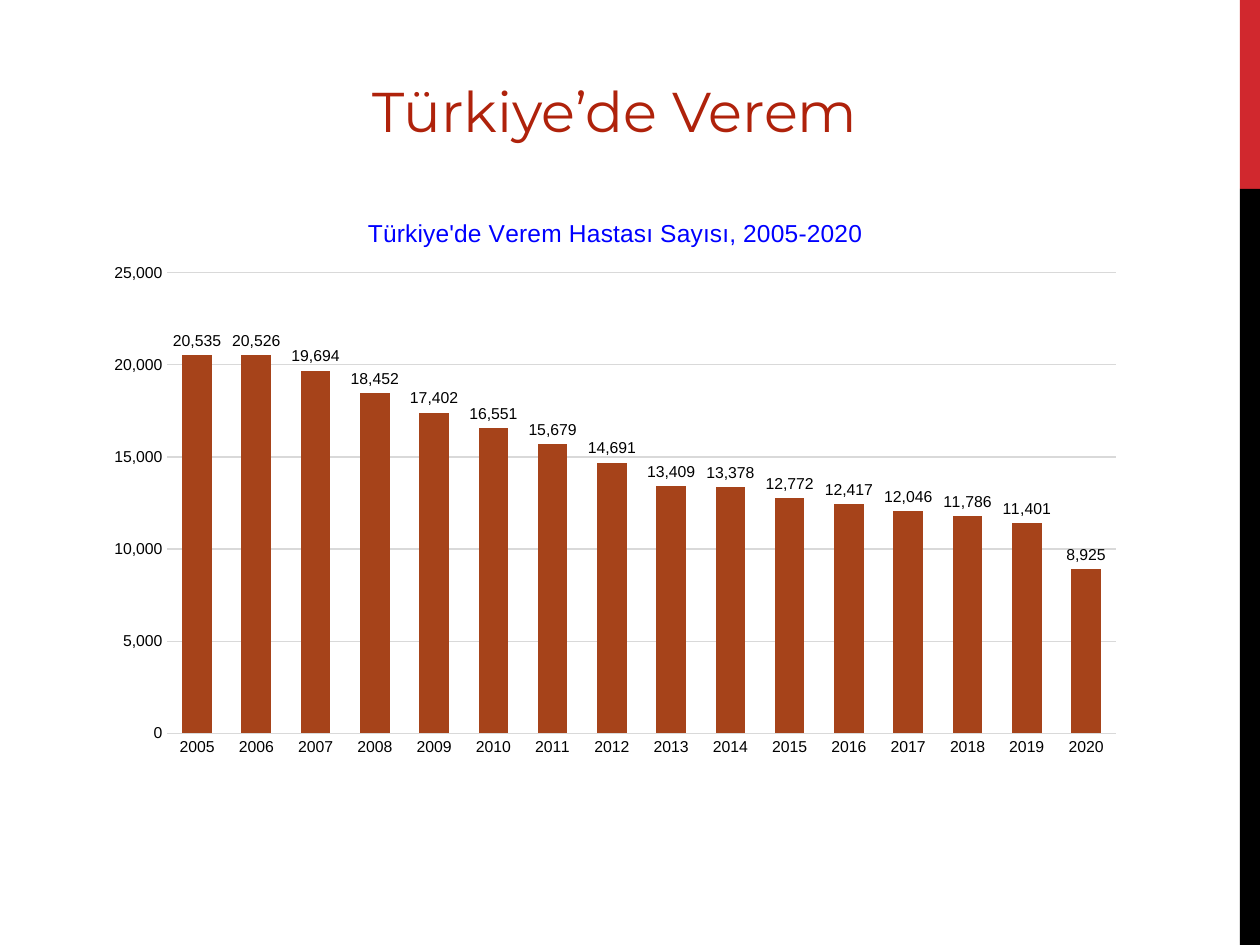
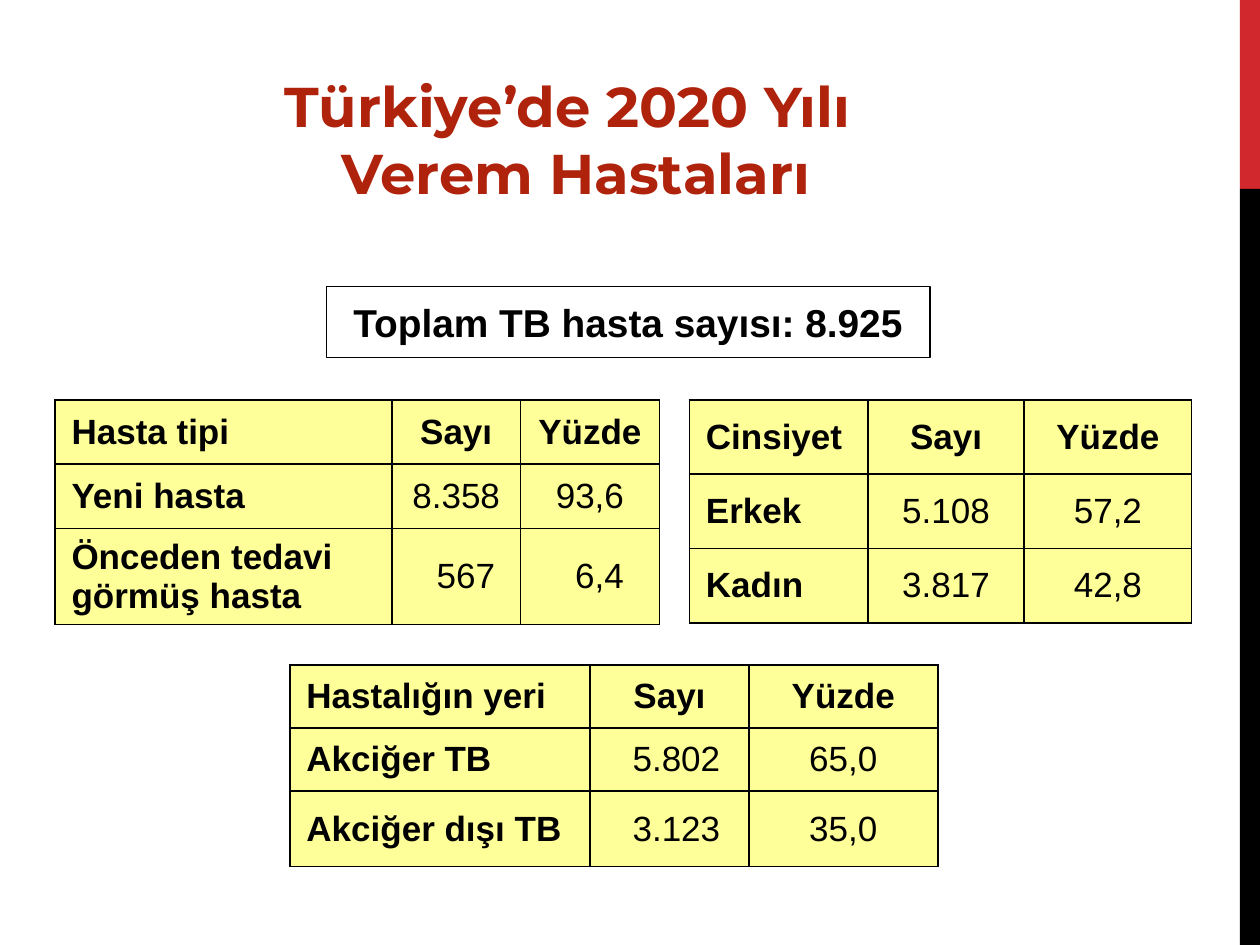
from pptx import Presentation
from pptx.chart.data import CategoryChartData
from pptx.dml.color import RGBColor
from pptx.enum.chart import XL_CHART_TYPE, XL_LABEL_POSITION, XL_TICK_MARK
from pptx.enum.shapes import MSO_SHAPE
from pptx.enum.text import MSO_ANCHOR, MSO_AUTO_SIZE, PP_ALIGN
from pptx.oxml import parse_xml
from pptx.oxml.ns import nsdecls, qn
from pptx.util import Pt

COLOURS = {
    "title": "AF220B",
    "band": "D1282E",
    "black": "000000",
    "white": "FFFFFF",
    "bar": "A6431A",
    "chart title": "0000FF",
    "grid": "D9D9D9",
    "cell": "FFFF99",
}
WIDTH, HEIGHT = 720, 540
BAND_WIDTH, BAND_SPLIT = 11.5, 108
TITLE_ONLY = 5

PATIENTS = [20535, 20526, 19694, 18452, 17402, 16551, 15679, 14691,
            13409, 13378, 12772, 12417, 12046, 11786, 11401, 8925]
YEARS = [str(2005 + offset) for offset in range(len(PATIENTS))]


def rgb(name):
    return RGBColor.from_string(COLOURS[name])


def style(font, size, colour="black", bold=False, face="Arial"):
    font.name, font.size, font.bold = face, Pt(size), bold
    font.color.rgb = rgb(colour)


def add_box(slide, box, fill, outline=None):
    shape = slide.shapes.add_shape(MSO_SHAPE.RECTANGLE, *map(Pt, box))
    shape.shadow.inherit = False
    shape.fill.solid()
    shape.fill.fore_color.rgb = rgb(fill)
    if outline:
        shape.line.color.rgb = rgb(outline)
        shape.line.width = Pt(0.75)
    else:
        shape.line.fill.background()
    return shape


def add_titled_slide(deck, title_text, box, bold=False):
    """Add a slide with the side bands and a centred title in box."""
    slide = deck.slides.add_slide(deck.slide_layouts[TITLE_ONLY])
    left = WIDTH - BAND_WIDTH
    add_box(slide, (left, 0, BAND_WIDTH, BAND_SPLIT), "band")
    add_box(slide, (left, BAND_SPLIT, BAND_WIDTH, HEIGHT - BAND_SPLIT), "black")

    title = slide.shapes.title
    title.left, title.top, title.width, title.height = map(Pt, box)
    frame = title.text_frame
    frame.text = title_text
    frame.word_wrap = True
    frame.auto_size = MSO_AUTO_SIZE.NONE
    frame.vertical_anchor = MSO_ANCHOR.TOP
    for paragraph in frame.paragraphs:
        paragraph.alignment = PP_ALIGN.CENTER
        for run in paragraph.runs:
            style(run.font, 32, "title", bold, "Montserrat")
    return slide


def set_plot_area(chart, **fractions):
    """Fix the inner plot area as fractions x, y, w, h of the chart."""
    plot_area = chart.element.find(".//" + qn("c:plotArea"))
    for automatic in plot_area.findall(qn("c:layout")):
        plot_area.remove(automatic)
    values = "".join(f'<c:{key} val="{value}"/>' for key, value in fractions.items())
    plot_area.insert(0, parse_xml(
        f'<c:layout {nsdecls("c")}><c:manualLayout><c:layoutTarget val="inner"/>'
        f'<c:xMode val="edge"/><c:yMode val="edge"/>{values}'
        f'</c:manualLayout></c:layout>'))


def add_patient_chart(slide, box):
    data = CategoryChartData(number_format="#,##0")
    data.categories = YEARS
    data.add_series("Series 1", PATIENTS)
    chart = slide.shapes.add_chart(
        XL_CHART_TYPE.COLUMN_CLUSTERED, *map(Pt, box), data).chart
    style(chart.font, 10)
    chart.has_legend = False
    chart.has_title = True
    heading = chart.chart_title.text_frame
    heading.text = "Türkiye'de Verem Hastası Sayısı, 2005-2020"
    style(heading.paragraphs[0].runs[0].font, 14, "chart title")
    set_plot_area(chart, x=0.07, y=0.135, w=0.91, h=0.8)

    years, counts = chart.category_axis, chart.value_axis
    for axis in (years, counts):
        axis.major_tick_mark = axis.minor_tick_mark = XL_TICK_MARK.NONE
        style(axis.tick_labels.font, 9)
    counts.minimum_scale, counts.maximum_scale, counts.major_unit = 0, 25000, 5000
    counts.tick_labels.number_format = "#,##0"
    counts.tick_labels.number_format_is_linked = False
    counts.format.line.fill.background()
    for line in (years.format.line, counts.major_gridlines.format.line):
        line.color.rgb = rgb("grid")
        line.width = Pt(0.75)

    bars = chart.plots[0]
    bars.gap_width = 100
    bars.vary_by_categories = False
    fill = bars.series[0].format.fill
    fill.solid()
    fill.fore_color.rgb = rgb("bar")
    bars.has_data_labels = True
    labels = bars.data_labels
    labels.show_value = True
    labels.position = XL_LABEL_POSITION.OUTSIDE_END
    labels.number_format = "#,##0"
    labels.number_format_is_linked = False
    style(labels.font, 9)


def add_total(slide, box):
    frame = add_box(slide, box, "white", "black").text_frame
    frame.text = "Toplam TB hasta sayısı: 8.925"
    frame.word_wrap = True
    frame.vertical_anchor = MSO_ANCHOR.MIDDLE
    total = frame.paragraphs[0]
    total.alignment = PP_ALIGN.CENTER
    style(total.runs[0].font, 22.2, bold=True)


def format_cell(cell, text, is_label, bold, indent):
    properties = cell._tc.get_or_add_tcPr()
    for side in "LRTB":
        properties.append(parse_xml(
            f'<a:ln{side} {nsdecls("a")} w="12700"><a:solidFill>'
            f'<a:srgbClr val="{COLOURS["black"]}"/></a:solidFill></a:ln{side}>'))
    cell.fill.solid()
    cell.fill.fore_color.rgb = rgb("cell")
    cell.vertical_anchor = MSO_ANCHOR.MIDDLE
    side_margin, end_margin = (9.4, 3.6) if is_label else (0.7, 0.5)
    cell.margin_left = Pt(side_margin + indent)
    cell.margin_right = Pt(side_margin)
    cell.margin_top = cell.margin_bottom = Pt(end_margin)
    cell.text_frame.text = text
    paragraph = cell.text_frame.paragraphs[0]
    paragraph.alignment = PP_ALIGN.LEFT if is_label else PP_ALIGN.CENTER
    style(paragraph.runs[0].font, 20, bold=bold)


def add_breakdown(slide, corner, widths, heights, label, rows, indents=None):
    """Add a count and percentage table; indents maps (row, column) to points."""
    indents = indents or {}
    cells = [(label, "Sayı", "Yüzde"), *rows]
    table = slide.shapes.add_table(
        len(cells), len(widths),
        *map(Pt, (*corner, sum(widths), sum(heights)))).table
    table.horz_banding = False
    for column, width in zip(table.columns, widths):
        column.width = Pt(width)
    for row, height in zip(table.rows, heights):
        row.height = Pt(height)
    for r, texts in enumerate(cells):
        for c, text in enumerate(texts):
            format_cell(table.cell(r, c), text, is_label=c == 0,
                        bold=r == 0 or c == 0, indent=indents.get((r, c), 0))


def build_trend_slide(deck):
    slide = add_titled_slide(deck, "Türkiye’de Verem", (127.5, 40.3, 448, 46))
    add_patient_chart(slide, (54, 111.5, 595.5, 329))


def build_breakdown_slide(deck):
    slide = add_titled_slide(deck, "Türkiye’de 2020 Yılı \nVerem Hastaları",
                             (59.8, 37.4, 538.5, 85), bold=True)
    add_total(slide, (186.5, 163.7, 345, 40.5))
    upper_row = 228.5
    add_breakdown(slide, (394, upper_row), (102, 89.3, 95.7), (42.5,) * 3, "Cinsiyet",
                  [("Erkek", "5.108", "57,2"), ("Kadın", "3.817", "42,8")])
    add_breakdown(slide, (165.7, 380), (171.5, 90.7, 108), (36, 36, 43.2),
                  "Hastalığın yeri",
                  [("Akciğer TB", "5.802", "65,0"), ("Akciğer dışı TB", "3.123", "35,0")],
                  {(1, 1): 8, (2, 1): 8})
    add_breakdown(slide, (31.5, upper_row), (192.5, 73.5, 79.3), (36.7, 36.7, 55),
                  "Hasta tipi",
                  [("Yeni hasta", "8.358", "93,6"),
                   ("Önceden tedavi görmüş hasta", "567", "6,4")],
                  {(2, 1): 11, (2, 2): 11})


def main():
    deck = Presentation()
    deck.slide_width, deck.slide_height = Pt(WIDTH), Pt(HEIGHT)
    build_trend_slide(deck)
    build_breakdown_slide(deck)
    deck.save("out.pptx")


if __name__ == "__main__":
    main()
